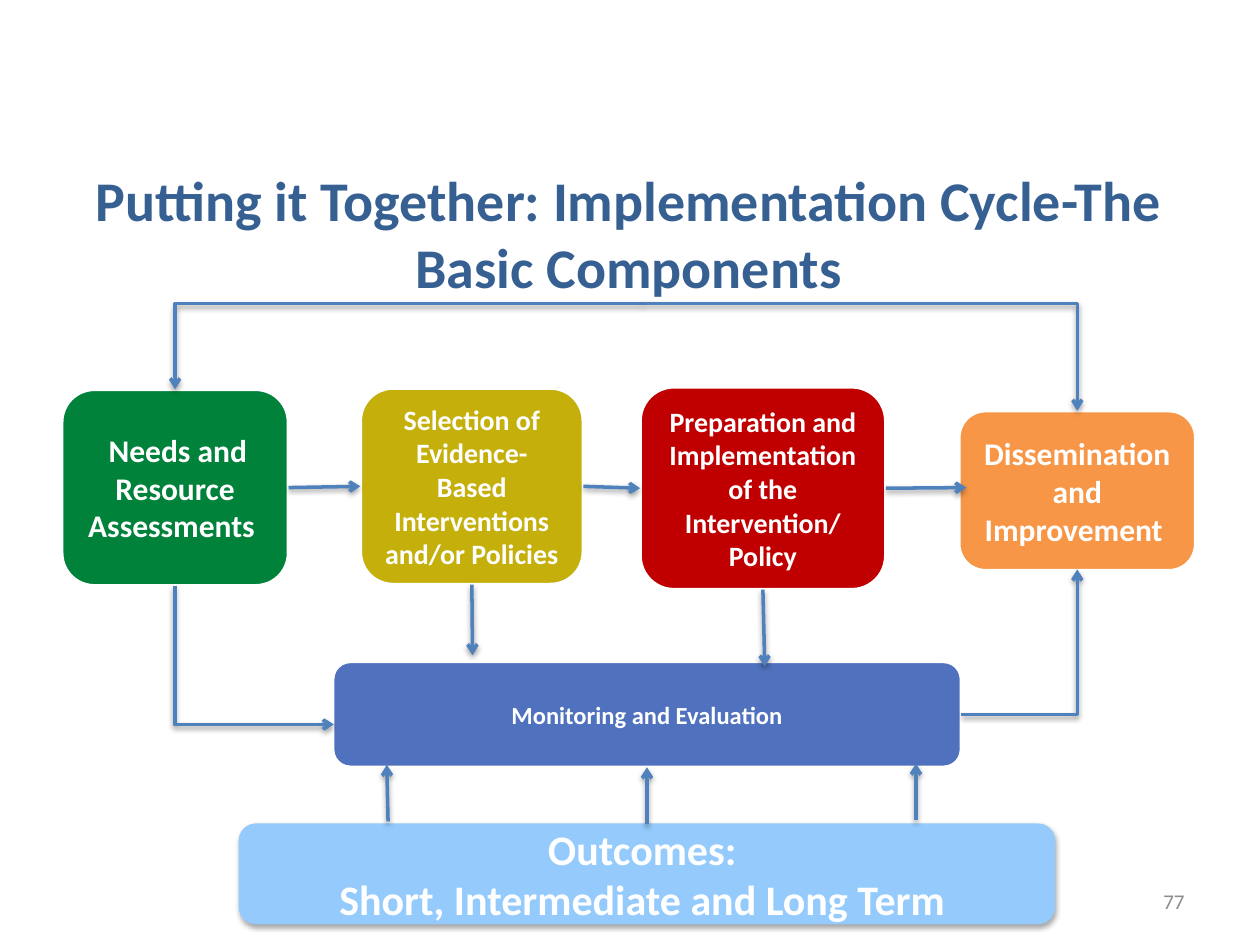
from lxml.etree import SubElement
from pptx import Presentation
from pptx.dml.color import RGBColor
from pptx.enum.shapes import MSO_CONNECTOR, MSO_SHAPE
from pptx.enum.text import MSO_ANCHOR, PP_ALIGN
from pptx.oxml.ns import qn
from pptx.util import Inches, Pt

THEME = {
    "font": "Calibri",
    "title": "376092", "line": "4F81BD", "white": "FFFFFF", "number": "8C8C8C",
    "green": "00823B", "olive": "C5AF0B", "red": "C00000",
    "orange": "F79646", "blue": "5072BE", "sky": "94CBFC",
    "title_size": 32, "outcome_size": 24, "large": 18, "medium": 16,
    "small": 14, "number_size": 12, "line_width": 2, "thin": 0.75,
}

TITLE = "Putting it Together: Implementation Cycle-The Basic Components"
TITLE_AREA = (0.23, 1.22, 9.52, 1.25)
PAGE_NUMBER = "77"
NUMBER_AREA = (7.17, 6.95, 2.33, 0.4)

BOXES = {
    "needs": ((0.49, 3.09, 1.8, 1.56), "green", [
        [(" ", "small", False), ("Needs and Resource Assessments ", "large", True)]]),
    "selection": ((2.86, 3.08, 1.77, 1.56), "olive", [
        [("Selection of Evidence-Based Interventions and/or Policies", "medium", True)]]),
    "preparation": ((5.08, 3.07, 1.95, 1.61), "red", [
        [("Preparation and Implementation of the Intervention/", "medium", True)],
        [("Policy", "medium", True)]]),
    "monitoring": ((2.64, 5.25, 4.99, 0.84), "blue", [
        [("Monitoring and Evaluation", "small", True)]]),
    "dissemination": ((7.61, 3.26, 1.88, 1.27), "orange", [
        [("Dissemination and Improvement ", "large", True)]]),
    "outcomes": ((1.9, 6.54, 6.47, 0.79), "sky", [
        [("Outcomes: ", "outcome_size", True)],
        [("Short, Intermediate and Long Term ", "outcome_size", True)]]),
}

TOP, LEFT, BOTTOM, RIGHT = range(4)
ARROWS = [
    (("needs", RIGHT), ("selection", LEFT)),
    (("selection", RIGHT), ("preparation", LEFT)),
    (("preparation", RIGHT), (7.67, 3.87)),
    (("selection", BOTTOM), (3.75, 5.2)),
    (("preparation", BOTTOM), (6.07, 5.29)),
    ((3.08, 6.52), (3.07, 6.07)),
    (("outcomes", TOP), ("monitoring", BOTTOM)),
    ((7.27, 6.51), (7.27, 6.06)),
]
LOOP_START = (5.1, 2.41)
BENT_ARROWS = [
    ((1.39, 4.65), (2.65, 5.75), True),
    ((7.63, 5.67), (8.55, 4.52), False),
    (LOOP_START, (1.39, 3.09), False),
    (LOOP_START, (8.55, 3.26), False),
]


def color(name):
    return RGBColor.from_string(THEME[name])


def inches(values):
    return [Inches(value) for value in values]


def add_text(frame, paragraphs, ink, alignment):
    frame.word_wrap = True
    frame.vertical_anchor = MSO_ANCHOR.MIDDLE
    for index, spans in enumerate(paragraphs):
        para = frame.add_paragraph() if index else frame.paragraphs[0]
        para.alignment = alignment
        for text, size, bold in spans:
            span = para.add_run()
            span.text = text
            span.font.name = THEME["font"]
            span.font.size = Pt(THEME[size])
            span.font.bold = bold
            span.font.color.rgb = color(ink)


def add_box(page, name):
    area, fill, paragraphs = BOXES[name]
    raised = name == "outcomes"
    box = page.shapes.add_shape(MSO_SHAPE.ROUNDED_RECTANGLE, *inches(area))
    box.fill.solid()
    box.fill.fore_color.rgb = color(fill)
    box.line.color.rgb = color(fill if raised else "white")
    box.line.width = Pt(THEME["thin" if raised else "line_width"])
    if not raised:
        box.shadow.inherit = False
    add_text(box.text_frame, paragraphs, "white", PP_ALIGN.CENTER)
    return box


def add_arrow(page, kind, start, end):
    arrow = page.shapes.add_connector(kind, *inches(start + end))
    arrow.line.color.rgb = color("line")
    arrow.line.width = Pt(THEME["line_width"])
    SubElement(arrow.line._get_or_add_ln(), qn("a:tailEnd"), type="arrow")
    return arrow


def locate(place):
    name, side = place
    if name not in BOXES:
        return place
    left, top, width, height = BOXES[name][0]
    across, down = {TOP: (0.5, 0), LEFT: (0, 0.5), BOTTOM: (0.5, 1), RIGHT: (1, 0.5)}[side]
    return left + across * width, top + down * height


def add_straight_arrow(page, boxes, start, end):
    arrow = add_arrow(page, MSO_CONNECTOR.STRAIGHT, locate(start), locate(end))
    for place, connect in ((start, arrow.begin_connect), (end, arrow.end_connect)):
        if place[0] in boxes:
            connect(boxes[place[0]], place[1])


def add_bent_arrow(page, start, end, vertical_first):
    if vertical_first:
        middle_x, middle_y = (start[0] + end[0]) / 2, (start[1] + end[1]) / 2
        half_x, half_y = (end[0] - start[0]) / 2, (end[1] - start[1]) / 2
        start = (middle_x + half_y, middle_y - half_x)
        end = (middle_x - half_y, middle_y + half_x)
    arrow = add_arrow(page, MSO_CONNECTOR.ELBOW, start, end)
    properties = arrow._element.spPr
    properties.find(qn("a:prstGeom")).set("prst", "bentConnector2")
    if vertical_first:
        properties.find(qn("a:xfrm")).set("rot", str(270 * 60000))


def main():
    deck = Presentation()
    deck.slide_width, deck.slide_height = Inches(10), Inches(7.5)
    page = deck.slides.add_slide(deck.slide_layouts[5])

    title = page.shapes.title
    title.left, title.top, title.width, title.height = inches(TITLE_AREA)
    add_text(title.text_frame, [[(TITLE, "title_size", True)]], "title", PP_ALIGN.CENTER)

    boxes = {name: add_box(page, name) for name in BOXES}
    for start, end in ARROWS:
        add_straight_arrow(page, boxes, start, end)
    for start, end, vertical_first in BENT_ARROWS:
        add_bent_arrow(page, start, end, vertical_first)

    number = page.shapes.add_textbox(*inches(NUMBER_AREA))
    add_text(number.text_frame, [[(PAGE_NUMBER, "number_size", False)]],
             "number", PP_ALIGN.RIGHT)
    deck.save("out.pptx")


if __name__ == "__main__":
    main()
